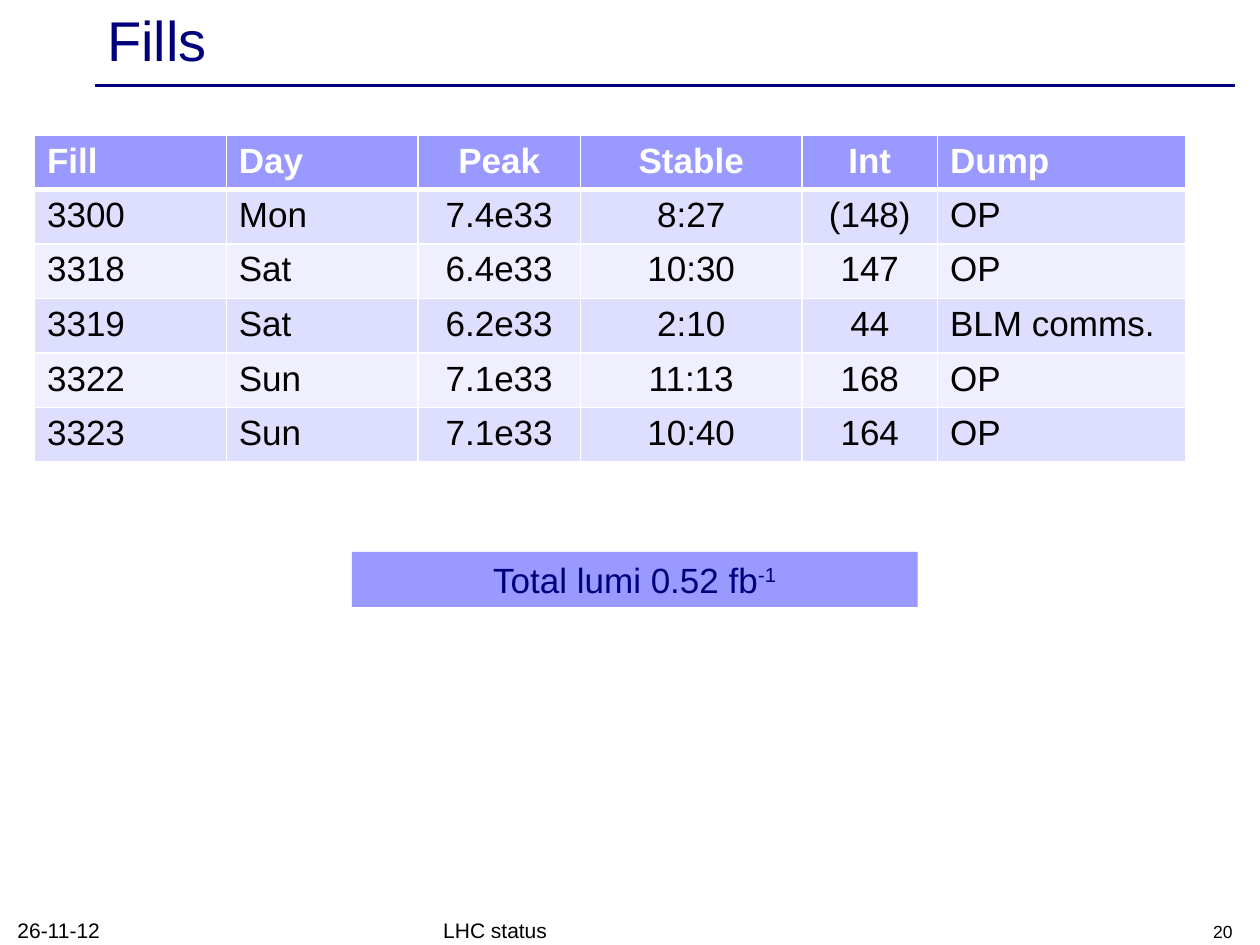
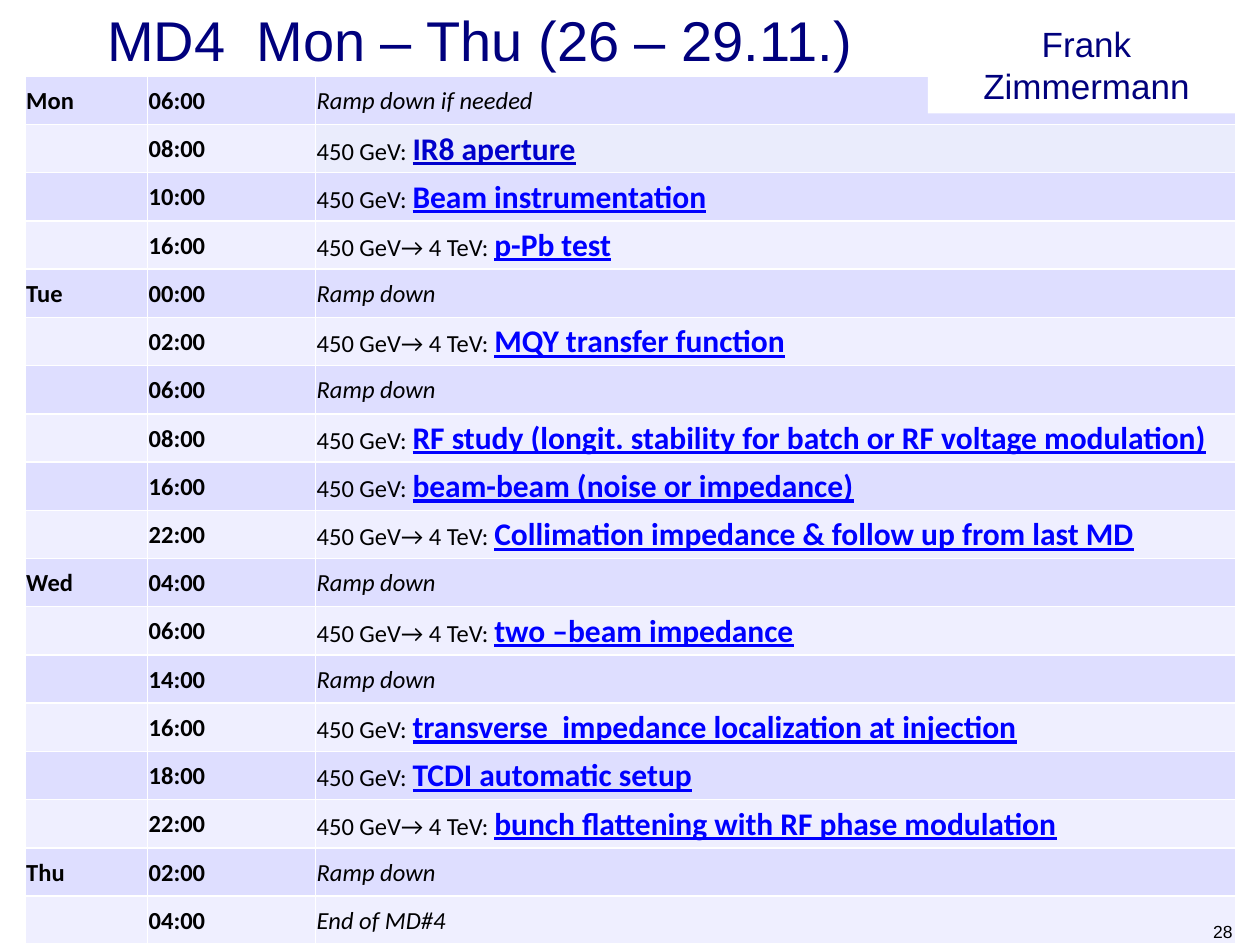
from dataclasses import dataclass
from lxml import etree
from pptx import Presentation
from pptx.dml.color import RGBColor
from pptx.enum.shapes import MSO_CONNECTOR, MSO_SHAPE
from pptx.enum.text import MSO_ANCHOR, MSO_AUTO_SIZE, PP_ALIGN
from pptx.oxml.ns import qn
from pptx.util import Pt

LEFT, MID, RIGHT = PP_ALIGN.LEFT, PP_ALIGN.CENTER, PP_ALIGN.RIGHT
TOP, CENTER, BASE = MSO_ANCHOR.TOP, MSO_ANCHOR.MIDDLE, MSO_ANCHOR.BOTTOM
RECT, LINE, FIXED = MSO_SHAPE.RECTANGLE, MSO_CONNECTOR.STRAIGHT, MSO_AUTO_SIZE.NONE

LOW = "450 GeV: "
RAMP = "450 GeV→ 4 TeV: "

FILLS = {
    "title": "Fills",
    "date": "26-11-12",
    "foot": "LHC status",
    "page": "20",
    "total": ("Total lumi 0.52 fb", "-1"),
    "head": ("Fill", "Day", "Peak", "Stable", "Int", "Dump"),
    "rows": [
        ("3300", "Mon", "7.4e33", "8:27", "(148)", "OP"),
        ("3318", "Sat", "6.4e33", "10:30", "147", "OP"),
        ("3319", "Sat", "6.2e33", "2:10", "44", "BLM comms."),
        ("3322", "Sun", "7.1e33", "11:13", "168", "OP"),
        ("3323", "Sun", "7.1e33", "10:40", "164", "OP"),
    ],
    "align": (LEFT, LEFT, MID, MID, MID, LEFT),
    "cols": (109.6, 109.6, 92.8, 126.7, 77.4, 141.9),
}

PLAN = {
    "title": "MD4  Mon – Thu (26 – 29.11.)",
    "name": "Frank Zimmermann",
    "page": "28",
    "rows": [
        ("Mon", "06:00", "", "Ramp down if needed"),
        ("", "08:00", LOW, "IR8 aperture"),
        ("", "10:00", LOW, "Beam instrumentation"),
        ("", "16:00", RAMP, "p-Pb test"),
        ("Tue", "00:00", "", "Ramp down"),
        ("", "02:00", RAMP, "MQY transfer function"),
        ("", "06:00", "", "Ramp down"),
        ("", "08:00", LOW, "RF study (longit. stability for batch or RF voltage modulation)"),
        ("", "16:00", LOW, "beam-beam (noise or impedance)"),
        ("", "22:00", RAMP, "Collimation impedance & follow up from last MD"),
        ("Wed", "04:00", "", "Ramp down"),
        ("", "06:00", RAMP, "two –beam impedance"),
        ("", "14:00", "", "Ramp down"),
        ("", "16:00", LOW, "transverse  impedance localization at injection"),
        ("", "18:00", LOW, "TCDI automatic setup"),
        ("", "22:00", RAMP, "bunch flattening with RF phase modulation"),
        ("Thu", "02:00", "", "Ramp down"),
        ("", "04:00", "", "End of MD#4"),
    ],
    "cols": (70, 96, 525.8),
    "marked": "IR8 aperture",
}


@dataclass(frozen=True)
class Theme:
    sans: str = "Arial"
    cal: str = "Calibri"
    navy: str = "00007D"
    head: str = "9999FF"
    bands: tuple = ("DEDEFF", "EFEFFF")
    white: str = "FFFFFF"
    black: str = "000000"
    link: str = "0000FF"
    mark: str = "0000CC"
    tint: str = "EAECFC"
    title: int = 32
    large: int = 20
    task: int = 18
    small: int = 14
    foot: int = 12
    page: int = 10


T = Theme()


def rgb(code):
    return RGBColor.from_string(code)


def add_run(para, text, size, color, face=T.sans, bold=False, slant=False, under=False):
    run = para.add_run()
    run.text = text
    font = run.font
    font.name, font.size, font.color.rgb = face, Pt(size), rgb(color)
    font.bold, font.italic, font.underline = bold, slant, under
    return run


def set_frame(shape, anchor, align):
    frame = shape.text_frame
    frame.word_wrap, frame.auto_size = True, FIXED
    frame.vertical_anchor = anchor
    para = frame.paragraphs[0]
    para.alignment = align
    return para


def add_title(slide, text):
    shape = slide.shapes.title
    shape.left, shape.top, shape.width, shape.height = Pt(54), Pt(2), Pt(648), Pt(41)
    add_run(set_frame(shape, CENTER, LEFT), text, T.title, T.navy)


def add_rule(slide):
    rule = slide.shapes.add_connector(LINE, Pt(54), Pt(49), Pt(706), Pt(49))
    rule.line.color.rgb, rule.line.width = rgb(T.navy), Pt(2)
    etree.SubElement(rule._element.spPr, qn("a:effectLst"))


def add_foot(slide, text, left, width, size=T.foot, align=LEFT):
    box = slide.shapes.add_textbox(Pt(left), Pt(522), Pt(width), Pt(20))
    add_run(set_frame(box, BASE, align), text, size, T.black)


def add_page(slide, text):
    add_foot(slide, text, 543.6, 167.8, T.page, RIGHT)


def add_box(slide, place, fill):
    box = slide.shapes.add_shape(RECT, *map(Pt, place))
    box.shadow.inherit = False
    box.fill.solid()
    box.fill.fore_color.rgb = rgb(fill)
    box.line.fill.background()
    return set_frame(box, CENTER, MID)


def add_edges(cell, base):
    props = cell._tc.get_or_add_tcPr()
    for side, width in (("L", 1), ("R", 1), ("T", 1), ("B", base)):
        edge = etree.SubElement(props, qn("a:ln" + side), w=str(Pt(width)))
        fill = etree.SubElement(edge, qn("a:solidFill"))
        etree.SubElement(fill, qn("a:srgbClr"), val=T.white)


def add_grid(slide, left, top, cols, rows):
    shape = slide.shapes.add_table(
        len(rows), len(cols), Pt(left), Pt(top), Pt(sum(cols)), Pt(sum(rows)))
    grid = shape.table
    for col, width in zip(grid.columns, cols):
        col.width = Pt(width)
    for row, height in zip(grid.rows, rows):
        row.height = Pt(height)
    return grid


def set_cell(cell, fill, anchor, align=LEFT, base=1):
    add_edges(cell, base)
    cell.fill.solid()
    cell.fill.fore_color.rgb = rgb(fill)
    cell.vertical_anchor = anchor
    para = cell.text_frame.paragraphs[0]
    para.alignment = align
    return para


def fill_slide(slide):
    add_rule(slide)
    add_title(slide, FILLS["title"])
    add_foot(slide, FILLS["foot"], 246.2, 228)
    add_foot(slide, FILLS["date"], 2.9, 168)
    add_page(slide, FILLS["page"])

    para = add_box(slide, (201, 315.4, 323.4, 31.4), T.head)
    text, power = FILLS["total"]
    add_run(para, text, T.large, T.navy)
    run = add_run(para, power, T.large, T.navy)
    run._r.get_or_add_rPr().set("baseline", "30000")

    rows = [FILLS["head"]] + FILLS["rows"]
    grid = add_grid(slide, 19.7, 77.4, FILLS["cols"], [30.8] + [31.2] * len(FILLS["rows"]))
    for r, row in enumerate(rows):
        head = r == 0
        fill = T.head if head else T.bands[(r - 1) % 2]
        ink = T.white if head else T.black
        for c, text in enumerate(row):
            para = set_cell(grid.cell(r, c), fill, TOP, FILLS["align"][c], 3 if head else 1)
            add_run(para, text, T.large, ink, bold=head)


def plan_slide(slide):
    add_title(slide, PLAN["title"])
    rows = PLAN["rows"]
    grid = add_grid(slide, 14.2, 43.6, PLAN["cols"], [27.58] * len(rows))
    for r, (day, time, beam, task) in enumerate(rows):
        band = T.bands[r % 2]
        marked = task == PLAN["marked"]
        paras = []
        for c in range(3):
            cell = grid.cell(r, c)
            cell.margin_left = cell.margin_right = cell.margin_top = Pt(0.8)
            cell.margin_bottom = 0
            fill = T.tint if marked and c == 2 else band
            paras.append(set_cell(cell, fill, CENTER))
        for para, text in zip(paras, (day, time)):
            if text:
                add_run(para, text, T.small, T.black, T.cal, bold=True)
        if beam:
            add_run(paras[2], beam, T.small, T.black, T.cal)
            ink = T.mark if marked else T.link
            add_run(paras[2], task, T.task, ink, T.cal, bold=True, under=True)
        else:
            add_run(paras[2], task, T.small, T.black, T.cal, slant=True)
    add_page(slide, PLAN["page"])
    para = add_box(slide, (530.2, 9.4, 181.4, 55.4), T.white)
    add_run(para, PLAN["name"], T.large, T.navy)


def main():
    deck = Presentation()
    deck.slide_width, deck.slide_height = Pt(720), Pt(540)
    for build in (fill_slide, plan_slide):
        build(deck.slides.add_slide(deck.slide_layouts[5]))
    deck.save("out.pptx")


if __name__ == "__main__":
    main()
